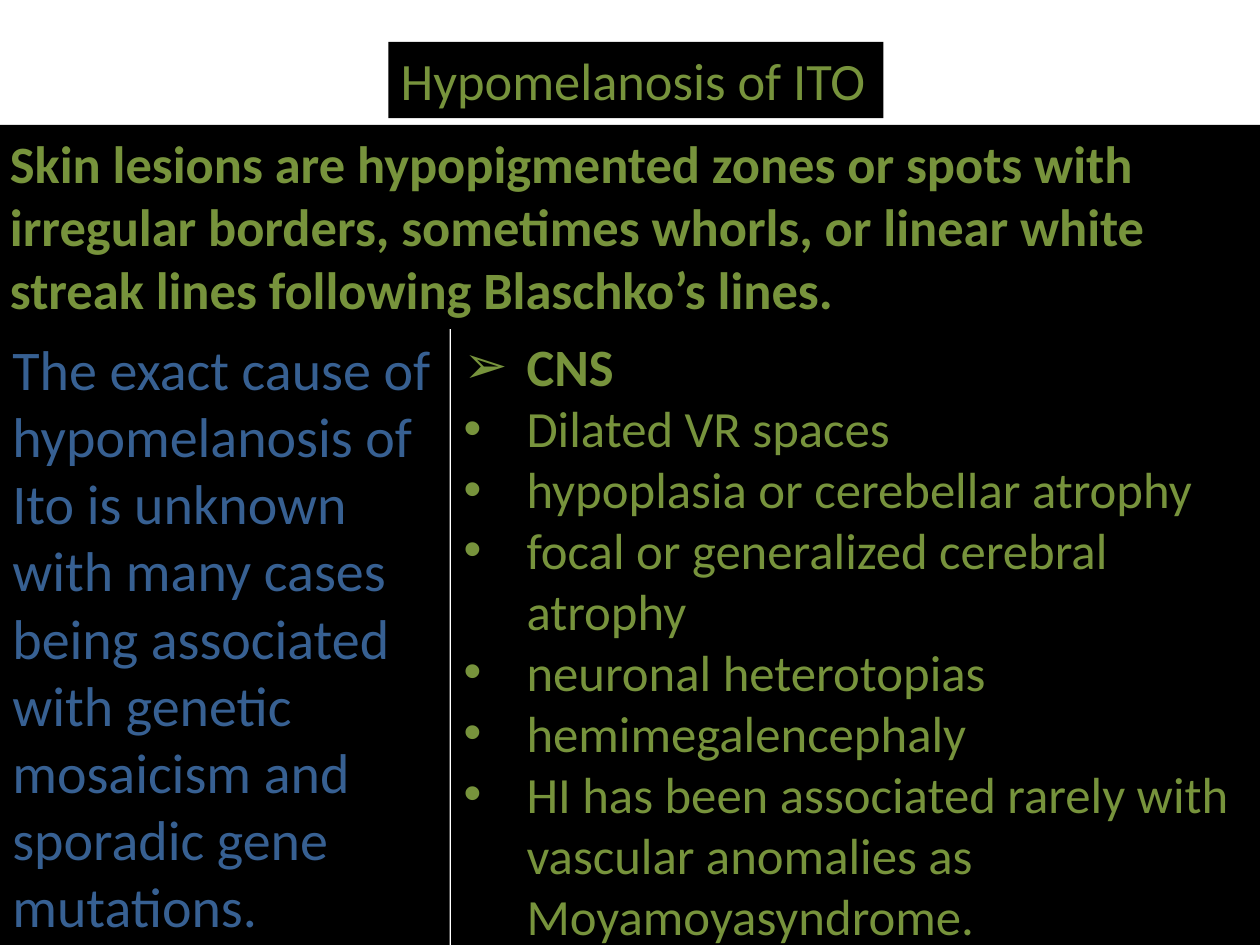
import pptx
import pptx.util
import pptx.dml.color
import pptx.enum.text
import pptx.oxml.ns
import lxml.etree

Pt = pptx.util.Pt
BLACK = pptx.dml.color.RGBColor(0x00, 0x00, 0x00)
GREEN = pptx.dml.color.RGBColor(0x77, 0x93, 0x3C)
BLUE = pptx.dml.color.RGBColor(0x37, 0x60, 0x92)

INDENT = Pt(36)
HEADING = {"size": Pt(30), "bold": True}
PLAIN = {"size": Pt(29), "bold": False}

TITLE = [("Hypomelanosis of ITO", None, {"size": Pt(30)})]
FINDINGS = [
    ("CNS", "➢", HEADING),
    ("Dilated VR spaces", "•", PLAIN),
    ("hypoplasia or cerebellar atrophy", "•", PLAIN),
    ("focal or generalized cerebral atrophy", "•", PLAIN),
    ("neuronal heterotopias", "•", PLAIN),
    ("hemimegalencephaly", "•", PLAIN),
    ("HI has been associated rarely with vascular anomalies as Moyamoyasyndrome.", "•", PLAIN),
]
CAUSE = [(
    "The exact cause of hypomelanosis of Ito is unknown with many cases being "
    "associated with genetic mosaicism and sporadic gene mutations.",
    None, {"size": Pt(32)},
)]
SKIN = [(
    "Skin lesions are hypopigmented zones or spots with irregular borders, sometimes "
    "whorls, or linear white streak lines following Blaschko’s lines.",
    None, HEADING,
)]

PANELS = [
    ((221.9, 24, 283, 43.6), False, GREEN, TITLE),
    ((257.8, 187.4, 463, 360), True, GREEN, FINDINGS),
    ((0, 187.4, 257, 356.4), True, BLUE, CAUSE),
    ((-1.4, 71.4, 728.6, 116.6), True, GREEN, SKIN),
]


def add_bullet(paragraph, character):
    properties = paragraph._p.get_or_add_pPr()
    properties.set("marL", str(INDENT))
    properties.set("indent", str(-INDENT))
    for tag, name, value in (("a:buFont", "typeface", "Arial"), ("a:buChar", "char", character)):
        element = lxml.etree.SubElement(properties, pptx.oxml.ns.qn(tag))
        element.set(name, value)


def add_panel(slide, place, wrap, color, lines):
    shape = slide.shapes.add_textbox(*(Pt(length) for length in place))
    shape.fill.solid()
    shape.fill.fore_color.rgb = BLACK
    frame = shape.text_frame
    frame.word_wrap = wrap
    frame.auto_size = pptx.enum.text.MSO_AUTO_SIZE.SHAPE_TO_FIT_TEXT
    for index, (text, bullet, font_format) in enumerate(lines):
        paragraph = frame.add_paragraph() if index else frame.paragraphs[0]
        if bullet:
            add_bullet(paragraph, bullet)
        run = paragraph.add_run()
        run.text = text
        for name, value in {"name": "Calibri", **font_format}.items():
            setattr(run.font, name, value)
        run.font.color.rgb = color


def main():
    presentation = pptx.Presentation()
    presentation.slide_width = Pt(720)
    presentation.slide_height = Pt(540)
    slide = presentation.slides.add_slide(presentation.slide_layouts[6])
    for panel in PANELS:
        add_panel(slide, *panel)
    presentation.save("out.pptx")


if __name__ == "__main__":
    main()
